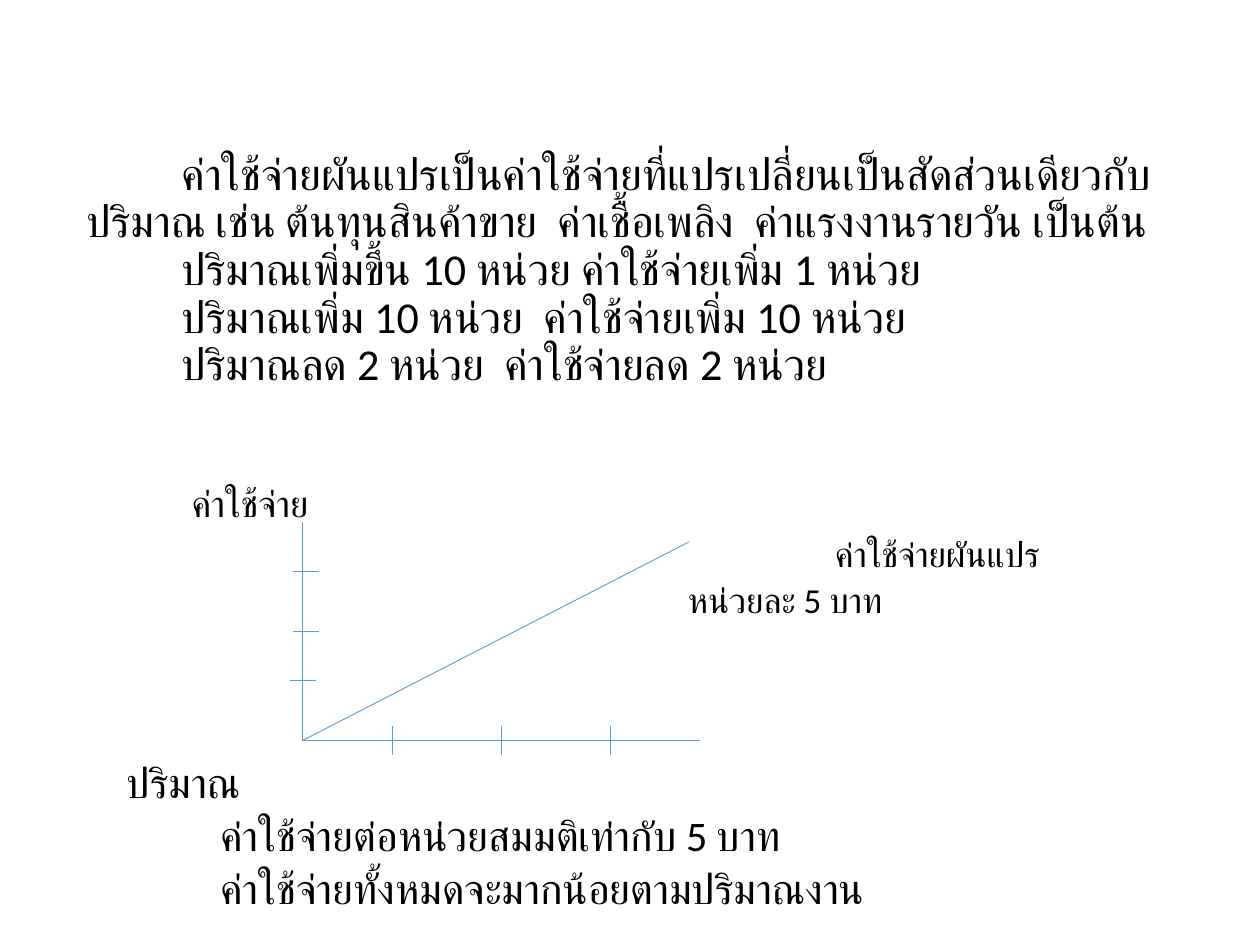
from dataclasses import dataclass

from lxml.etree import SubElement
from pptx import Presentation
from pptx.dml.color import RGBColor
from pptx.enum.shapes import MSO_CONNECTOR as Connector
from pptx.enum.text import MSO_ANCHOR as Anchor
from pptx.oxml.ns import qn
from pptx.util import Pt


@dataclass(frozen=True)
class Theme:
    font: str = "Calibri"
    ink: RGBColor = RGBColor(0x00, 0x00, 0x00)
    axis: RGBColor = RGBColor(0x5B, 0x9B, 0xD5)
    axis_width: float = 0.5
    intro: float = 25.2
    cost_axis: float = 21
    line_label: float = 20
    remark: float = 24


THEME = Theme()

# Paragraphs: text, size, indent, first-line indent, space before
INTRO = [
    (text, THEME.intro, 0, 54.3, 0)
    for text in (
        "ค่าใช้จ่ายผันแปรเป็นค่าใช้จ่ายที่แปรเปลี่ยนเป็นสัดส่วนเดียวกับปริมาณ เช่น "
        "ต้นทุนสินค้าขาย  ค่าเชื้อเพลิง  ค่าแรงงานรายวัน เป็นต้น",
        "ปริมาณเพิ่มขึ้น 10 หน่วย ค่าใช้จ่ายเพิ่ม 1 หน่วย",
        "ปริมาณเพิ่ม 10 หน่วย  ค่าใช้จ่ายเพิ่ม 10 หน่วย",
        "ปริมาณลด 2 หน่วย  ค่าใช้จ่ายลด 2 หน่วย",
    )
]
LABELS = [
    ("ค่าใช้จ่าย", THEME.cost_axis, 66.5, 0, 0),
    ("ค่าใช้จ่ายผันแปร", THEME.line_label, 434, 0, 9.6),
    ("หน่วยละ 5 บาท", THEME.line_label, 350, 0, 6.8),
    ("ปริมาณ", THEME.remark, 29.4, 0, 83.5),
    ("ค่าใช้จ่ายต่อหน่วยสมมติเท่ากับ 5 บาท", THEME.remark, 83, 0, 7.4),
    ("ค่าใช้จ่ายทั้งหมดจะมากน้อยตามปริมาณงาน", THEME.remark, 83, 0, 7),
]

# Graph geometry
ORIGIN_X, ORIGIN_Y = 172.8, 423.2
COST_TOP, QUANTITY_END = 298.3, 399.8
COST_TICKS = [(167.3, 326.6), (167.3, 360.7), (165.7, 388.8)]
QUANTITY_TICKS = [224 + 62.4 * step for step in range(3)]
COST_TICK_LENGTH, QUANTITY_TICK_LENGTH = 15, 16.6
QUANTITY_TICK_TOP = 414.7


def add_text(slide, place, paragraphs, line_spacing, frame_format):
    frame = slide.shapes.add_textbox(*map(Pt, place)).text_frame
    for name, value in {"word_wrap": True, **frame_format}.items():
        setattr(frame, name, value)
    for index, (text, size, indent, first_line, before) in enumerate(paragraphs):
        paragraph = frame.paragraphs[0] if index == 0 else frame.add_paragraph()
        spacing = {"line_spacing": line_spacing, "space_before": Pt(before), "space_after": Pt(0)}
        for name, value in spacing.items():
            setattr(paragraph, name, value)
        indents = paragraph._p.get_or_add_pPr()
        indents.set("marL", str(Pt(indent)))
        indents.set("indent", str(Pt(first_line)))
        run = paragraph.add_run()
        run.text = text
        run.font.color.rgb = THEME.ink
        for name, value in {"size": Pt(size), "name": THEME.font}.items():
            setattr(run.font, name, value)
        # Thai letters take the complex-script font
        SubElement(run._r.get_or_add_rPr(), qn("a:cs")).set("typeface", THEME.font)


def add_line(slide, x1, y1, x2, y2):
    line = slide.shapes.add_connector(Connector.STRAIGHT, *map(Pt, (x1, y1, x2, y2)))
    line.line.color.rgb = THEME.axis
    line.line.width = Pt(THEME.axis_width)
    SubElement(line._element.spPr, qn("a:effectLst"))


def add_graph(slide):
    # Axes
    add_line(slide, ORIGIN_X, COST_TOP, ORIGIN_X, ORIGIN_Y)
    add_line(slide, ORIGIN_X, ORIGIN_Y, QUANTITY_END, ORIGIN_Y)
    # Tick marks
    for x, y in COST_TICKS:
        add_line(slide, x, y, x + COST_TICK_LENGTH, y)
    for x in QUANTITY_TICKS:
        add_line(slide, x, QUANTITY_TICK_TOP, x, QUANTITY_TICK_TOP + QUANTITY_TICK_LENGTH)
    # Variable cost
    add_line(slide, ORIGIN_X, ORIGIN_Y, 393.8, 309.6)


def main():
    deck = Presentation()
    deck.slide_width, deck.slide_height = Pt(720), Pt(540)
    slide = deck.slides.add_slide(deck.slide_layouts[6])

    # Definition and examples
    add_text(slide, (42.5, 122.4, 648, 119.5), INTRO, 0.9,
             {"vertical_anchor": Anchor.MIDDLE, "margin_bottom": Pt(58)})
    # Graph labels and remarks
    add_text(slide, (36, 241.9, 648, 275.8), LABELS, 0.8,
             {"vertical_anchor": Anchor.TOP, "margin_top": Pt(37.5)})
    add_graph(slide)

    deck.save("out.pptx")


if __name__ == "__main__":
    main()
